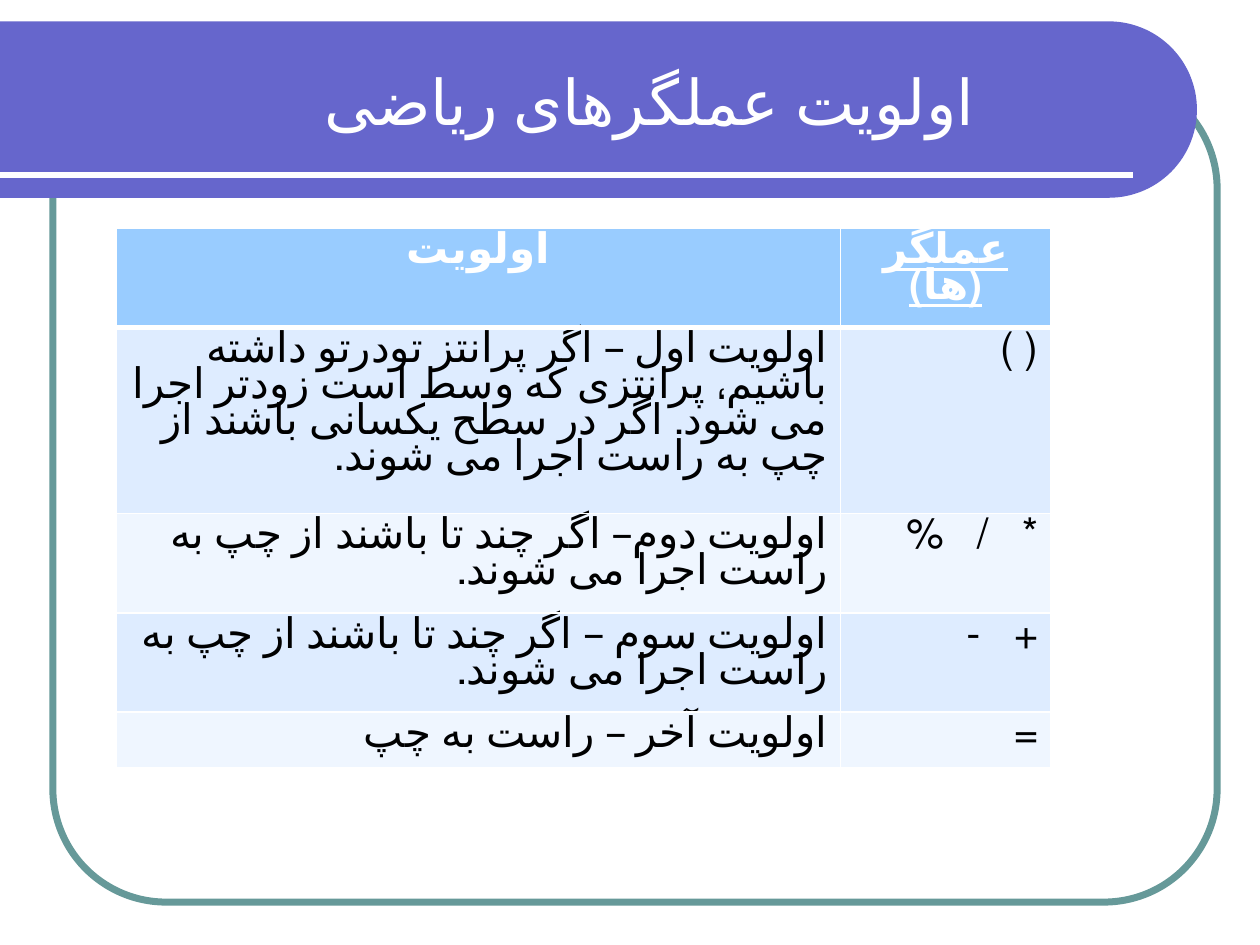
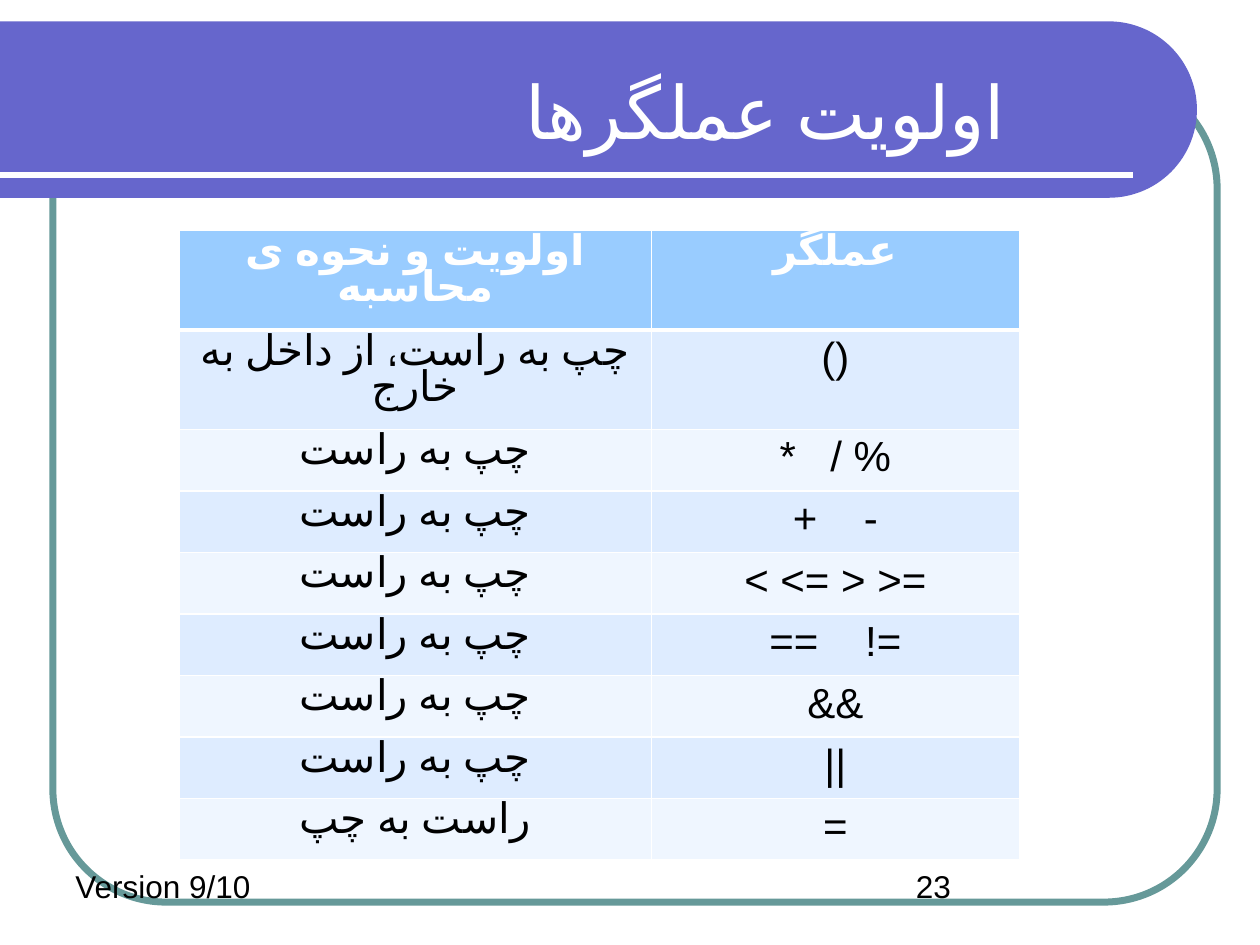
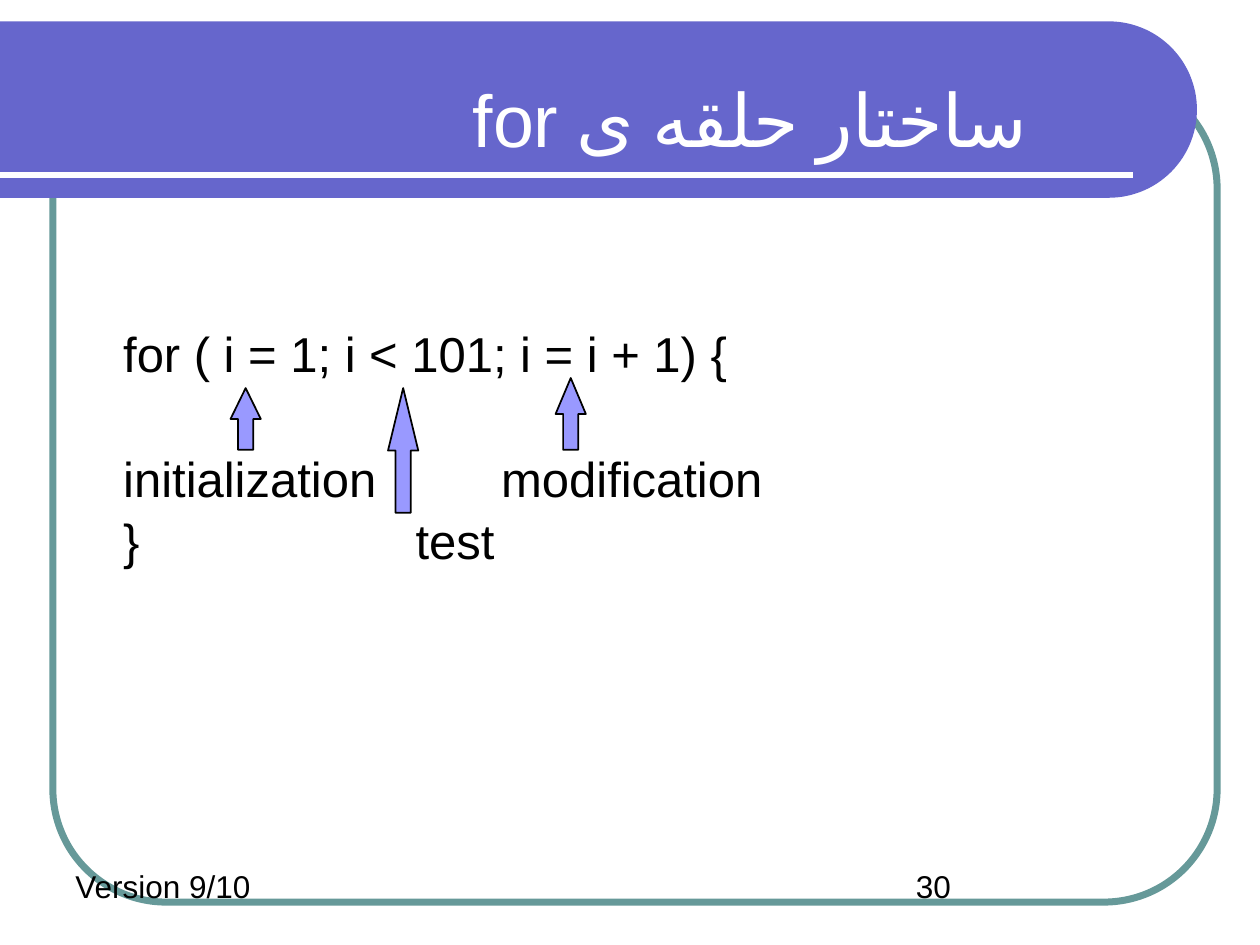
import itertools
import math
from dataclasses import dataclass

from lxml import etree
from pptx import Presentation
from pptx.dml.color import RGBColor
from pptx.enum import shapes, text
from pptx.oxml import ns
from pptx.util import Inches, Pt


@dataclass(frozen=True)
class Theme:
    font: str = "Arial"
    band: str = "6666CC"
    frame: str = "669999"
    white: str = "FFFFFF"
    ink: str = "000000"
    arrow: str = "9999FF"
    header: str = "99CCFF"
    stripes: tuple = ("DEECFF", "EFF6FF")
    title: int = 42
    code: int = 28
    cell: int = 24
    footer: int = 18


T = Theme()
RIGHT, CENTER = text.PP_ALIGN.RIGHT, text.PP_ALIGN.CENTER
# Marks for wide gaps between operators: extra points given to one space
GAPS = {"_": 13, "~": 20}


def rgb(value):
    return RGBColor.from_string(value)


def sub(parent, tag, **attrs):
    return etree.SubElement(parent, ns.qn(tag), attrs)


def style(r, size, color, bold=False, underline=False):
    f = r.font
    f.name, f.size, f.bold, f.underline = T.font, Pt(size), bold, underline
    f.color.rgb = rgb(color)
    if any(ch >= "آ" for ch in r.text):
        r._r.get_or_add_rPr().set("lang", "fa-IR")


def set_rtl(p):
    p.alignment = RIGHT
    p._p.get_or_add_pPr().set("rtl", "1")


def add_text(s, box, lines, size, color, rtl=False, middle=False):
    """Text box at (left, top, width, height), one paragraph a line."""
    tf = s.shapes.add_textbox(*map(Inches, box)).text_frame
    tf.word_wrap = True
    tf.vertical_anchor = text.MSO_ANCHOR.MIDDLE if middle else text.MSO_ANCHOR.TOP
    tf.text = "\n".join(lines)
    for p in tf.paragraphs:
        if rtl:
            set_rtl(p)
        for r in p.runs:
            style(r, size, color)
    return tf


# Shared frame, title band, title and footer
def add_band(s, top, width, height):
    radius = height / 2
    angles = [math.radians(a) for a in range(-90, 91, 3)]
    arc = [(Inches(width - radius + radius * math.cos(a)),
            Inches(top + radius + radius * math.sin(a))) for a in angles]
    fb = s.shapes.build_freeform(0, Inches(top))
    fb.add_line_segments(arc + [(0, Inches(top + height))], close=True)
    sp = fb.convert_to_shape()
    sp.shadow.inherit = False
    sp.fill.solid()
    sp.fill.fore_color.rgb = rgb(T.band)
    sp.line.fill.background()

    rule_y = Inches(top + height - 0.18)
    rule = s.shapes.add_connector(shapes.MSO_CONNECTOR.STRAIGHT,
                                  0, rule_y, Inches(width - 0.51), rule_y)
    rule.line.color.rgb = rgb(T.white)
    rule.line.width = Pt(3)
    sub(rule._element.spPr, "a:effectLst")


def new_slide(prs, title, title_box, title_size=T.title, number=None):
    s = prs.slides.add_slide(prs.slide_layouts[6])
    frame = s.shapes.add_shape(shapes.MSO_SHAPE.ROUNDED_RECTANGLE,
                               *map(Inches, (0.42, 0.6, 9.24, 6.56)))
    frame.adjustments[0] = 0.137
    frame.shadow.inherit = False
    frame.fill.background()
    frame.line.color.rgb = rgb(T.frame)
    frame.line.width = Pt(4)
    add_band(s, 0.17, 9.5, 1.4)
    add_text(s, title_box, [title], title_size, T.white, rtl=True, middle=True)
    if number:
        for left, label in ((0.5, "Version 9/10"), (7.17, number)):
            add_text(s, (left, 6.83, 2.33, 0.5), [label], T.footer, T.ink)
    return s


# Operator tables
def set_borders(cell, top, bottom):
    tc_pr = cell._tc.get_or_add_tcPr()
    for i, (side, width) in enumerate((("L", 1), ("R", 1), ("T", top), ("B", bottom))):
        ln = etree.Element(ns.qn("a:ln" + side), w=str(Pt(width)))
        sub(sub(ln, "a:solidFill"), "a:srgbClr", val=T.white)
        tc_pr.insert(i, ln)


def fill_cell(cell, label, row, rtl, underline):
    header = row == 0
    cell.fill.solid()
    cell.fill.fore_color.rgb = rgb(T.header if header else T.stripes[(row - 1) % 2])
    set_borders(cell, top=3 if row == 1 else 1, bottom=3 if header else 1)
    p = cell.text_frame.paragraphs[0]
    if rtl:
        set_rtl(p)
    if header or not rtl:
        p.alignment = CENTER
    persian = any(ch >= "آ" for ch in label)
    p.line_spacing = 0.86 if rtl or persian else 0.97
    for gap, chars in itertools.groupby(label, GAPS.get):
        r = p.add_run()
        r.text = " " if gap else "".join(chars)
        style(r, T.cell, T.white if header else T.ink, header, underline)
        if gap:
            r._r.get_or_add_rPr().set("spc", str(gap * 100))


def add_operator_table(s, left, top, widths, heights, rows, rtl=False):
    tbl = s.shapes.add_table(len(rows), len(widths), Inches(left), Inches(top),
                             Inches(sum(widths)), Inches(sum(heights))).table
    for col, width in zip(tbl.columns, widths):
        col.width = Inches(width)
    for i, (labels, height) in enumerate(zip(rows, heights)):
        tbl.rows[i].height = Inches(height)
        for j, label in enumerate(labels):
            fill_cell(tbl.cell(i, j), label, i, rtl, underline=rtl and i == 0 and j == 1)


# Parts of the for loop
def add_loop(s, left, top):
    lines = ["for ( i = 1; i < 101; i = i + 1) {",
             "initialization\tmodification", "}\ttest"]
    tf = add_text(s, (left, top, 8.5, 2.5), lines, T.code, T.ink)
    for p, before, tab in zip(tf.paragraphs, (0, 41, 5.5), (None, 3, 2.32)):
        p.line_spacing = 0.9
        p.space_before = Pt(before)
        if tab:
            tabs = sub(p._p.get_or_add_pPr(), "a:tabLst")
            sub(tabs, "a:tab", pos=str(Inches(tab)), algn="l")

    # Arrows up to the code: centre, tip and length, relative to the box
    thick = 0.24
    for x, tip, length in ((1.07, 0.51, 0.49), (2.32, 0.51, 0.99), (3.65, 0.43, 0.57)):
        sp = s.shapes.add_shape(
            shapes.MSO_SHAPE.RIGHT_ARROW, Inches(left + x - length / 2),
            Inches(top + tip + (length - thick) / 2), Inches(length), Inches(thick))
        sp.rotation = 270
        sp.adjustments[0] = 0.5
        sp.adjustments[1] = length / thick / 2
        sp.shadow.inherit = False
        sp.fill.solid()
        sp.fill.fore_color.rgb = rgb(T.arrow)
        sp.line.color.rgb = rgb(T.ink)
        sp.line.width = Pt(1)


def main():
    prs = Presentation()
    prs.slide_width, prs.slide_height = Inches(10), Inches(7.5)

    # Arithmetic operators
    s = new_slide(prs, "اولویت عملگرهای ریاضی", (0.83, 0.42, 7, 0.75), 36)
    add_operator_table(s, 0.92, 1.81, (5.75, 1.67), (0.76, 1.44, 0.76, 0.77, 0.43), [
        ("اولویت", "عملگر (ها)"),
        ("اولویت اول – اگر پرانتز تودرتو داشته باشیم، پرانتزی که وسط است زودتر اجرا "
         "می شود. اگر در سطح یکسانی باشند از چپ به راست اجرا می شوند.", "( )"),
        ("اولویت دوم– اگر چند تا باشند از چپ به راست اجرا می شوند.", "*_/_%"),
        ("اولویت سوم – اگر چند تا باشند از چپ به راست اجرا می شوند.", "+_-"),
        ("اولویت آخر – راست به چپ", "="),
    ], rtl=True)

    # All operators
    s = new_slide(prs, "اولویت عملگرها", (0.58, 0.33, 7.5, 1.08), number="23")
    left_to_right = ("*_/ %", "+~-", "< <= > >=", "==~!=", "&&", "||")
    add_operator_table(s, 1.42, 1.83, (3.75, 2.92), [0.76, 0.78] + [0.47] * 7, [
        ("اولویت و نحوه ی محاسبه", "عملگر"),
        ("چپ به راست، از داخل به خارج", "()"),
        *(("چپ به راست", operators) for operators in left_to_right),
        ("راست به چپ", "="),
    ])

    # The for loop
    s = new_slide(prs, "ساختار حلقه ی for", (0.5, 0.13, 7.75, 1.62), number="30")
    add_loop(s, 0.88, 2.57)

    prs.save("out.pptx")


if __name__ == "__main__":
    main()
